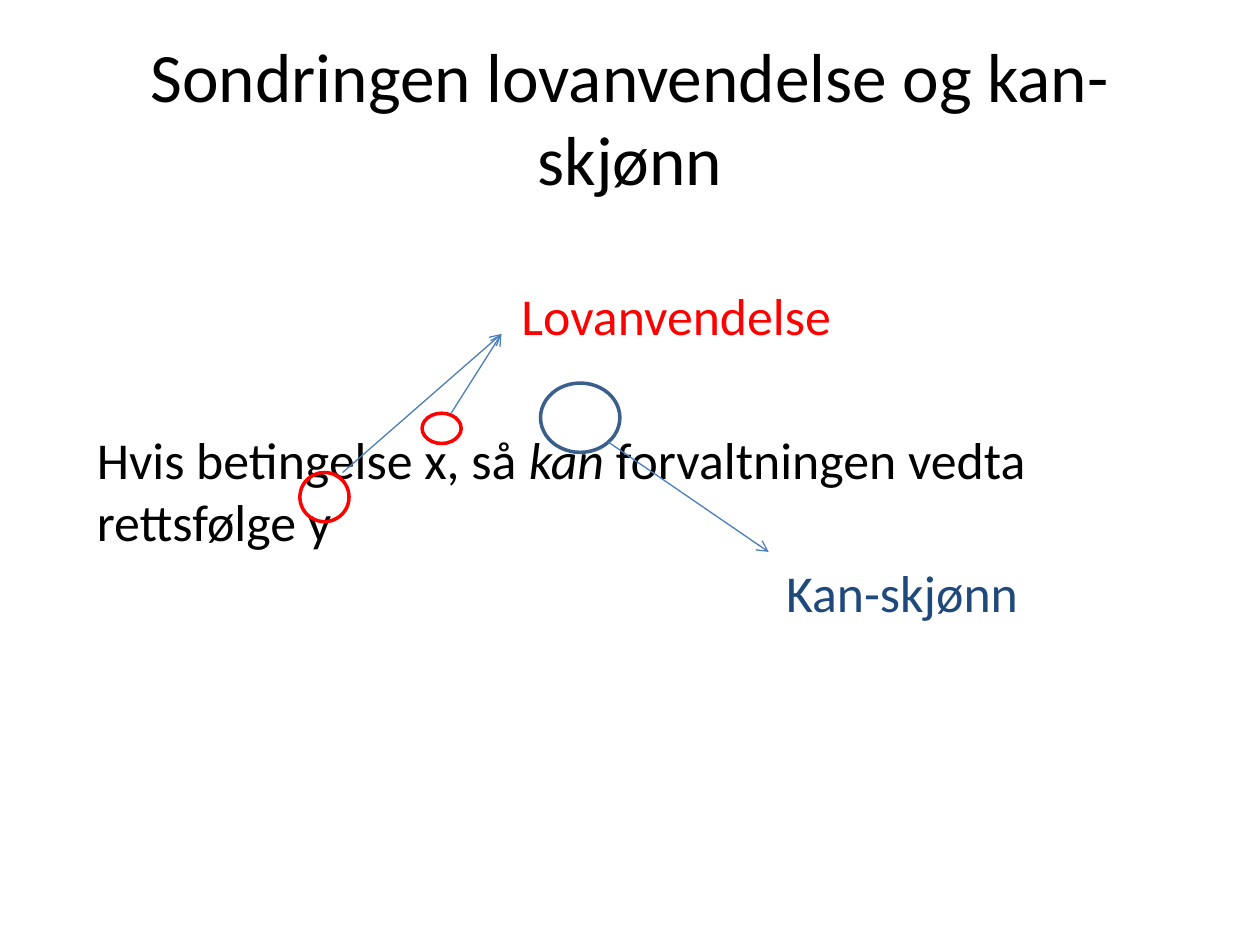
from dataclasses import dataclass

from lxml.etree import SubElement
from pptx import Presentation
from pptx.dml.color import RGBColor
from pptx.enum.shapes import MSO_CONNECTOR as Connector, MSO_SHAPE as Shape
from pptx.enum.text import MSO_ANCHOR as Anchor, PP_ALIGN as Align
from pptx.oxml.ns import qn
from pptx.util import Inches, Pt


@dataclass(frozen=True)
class Theme:
    font: str = "Calibri"
    black: str = "000000"
    red: str = "FF0000"
    navy: str = "1F497D"
    ring_blue: str = "3A5F8C"
    arrow_blue: str = "4B7EBC"
    title_size: float = 39.6
    body_size: float = 29.6
    ring_width: float = 2
    arrow_width: float = 0.75


THEME = Theme()


def set_format(target, values):
    for name, value in values.items():
        setattr(target, name, value)


def set_line(shape, color, width):
    shape.line.color.rgb = RGBColor.from_string(color)
    shape.line.width = Pt(width)


def add_text_frame(slide, box, **values):
    frame = slide.shapes.add_textbox(*map(Inches, box)).text_frame
    set_format(frame, {"word_wrap": True, **values})
    return frame


def fill_paragraph(paragraph, runs, size, color, **values):
    """Write (text, italic) runs in one size and colour."""
    set_format(paragraph, values)
    for text, italic in runs:
        run = paragraph.add_run()
        run.text = text
        set_format(run.font, {"name": THEME.font, "size": Pt(size), "italic": italic})
        run.font.color.rgb = RGBColor.from_string(color)


def add_ring(slide, box, color):
    ring = slide.shapes.add_shape(Shape.OVAL, *map(Inches, box))
    ring.shadow.inherit = False
    ring.fill.background()
    set_line(ring, color, THEME.ring_width)


def add_arrow(slide, start, end):
    arrow = slide.shapes.add_connector(
        Connector.STRAIGHT, *map(Inches, (*start, *end)))
    set_line(arrow, THEME.arrow_blue, THEME.arrow_width)
    properties = arrow.line._get_or_add_ln()
    SubElement(properties, qn("a:tailEnd"), type="arrow")
    SubElement(arrow._element.spPr, qn("a:effectLst"))


def add_title(slide):
    frame = add_text_frame(slide, (0.5, 0.3, 9, 1.25), vertical_anchor=Anchor.MIDDLE)
    fill_paragraph(frame.paragraphs[0],
                   [("Sondringen lovanvendelse og kan-skjønn", False)],
                   THEME.title_size, THEME.black, alignment=Align.CENTER)


def add_body(slide):
    frame = add_text_frame(slide, (0.67, 1.61, 7.87, 3.58), margin_top=Inches(0.64))
    rule = [("Hvis betingelse x, så ", False), ("kan", True),
            (" forvaltningen vedta rettsfølge y", False)]
    # Runs, colour, left indent in inches, space before in points
    rows = [
        ([("Lovanvendelse", False)], THEME.red, 3.37, 0),
        (rule, THEME.black, 0, 46.8),
        ([("Kan-skjønn", False)], THEME.navy, 5.47, 5.3),
    ]
    for index, (runs, color, indent, space) in enumerate(rows):
        paragraph = frame.add_paragraph() if index else frame.paragraphs[0]
        paragraph._p.get_or_add_pPr().set("marL", str(Inches(indent)))
        fill_paragraph(paragraph, runs, THEME.body_size, color,
                       alignment=Align.LEFT, space_before=Pt(space))


def main():
    presentation = Presentation()
    set_format(presentation, {"slide_width": Inches(10), "slide_height": Inches(7.5)})
    slide = presentation.slides.add_slide(presentation.slide_layouts[6])

    add_title(slide)
    add_body(slide)

    # Rings around x, y and "kan"
    for box, color in [
        ((3.35, 3.28, 0.31, 0.24), THEME.red),
        ((2.38, 3.75, 0.39, 0.39), THEME.red),
        ((4.29, 3.04, 0.63, 0.55), THEME.ring_blue),
    ]:
        add_ring(slide, box, color)

    # Arrows from the rings to their labels
    law_label, discretion_label = (3.98, 2.65), (6.1, 4.38)
    for start, end in [
        ((3.58, 3.28), law_label),
        ((2.72, 3.75), law_label),
        ((4.83, 3.51), discretion_label),
    ]:
        add_arrow(slide, start, end)

    presentation.save("out.pptx")


main()
